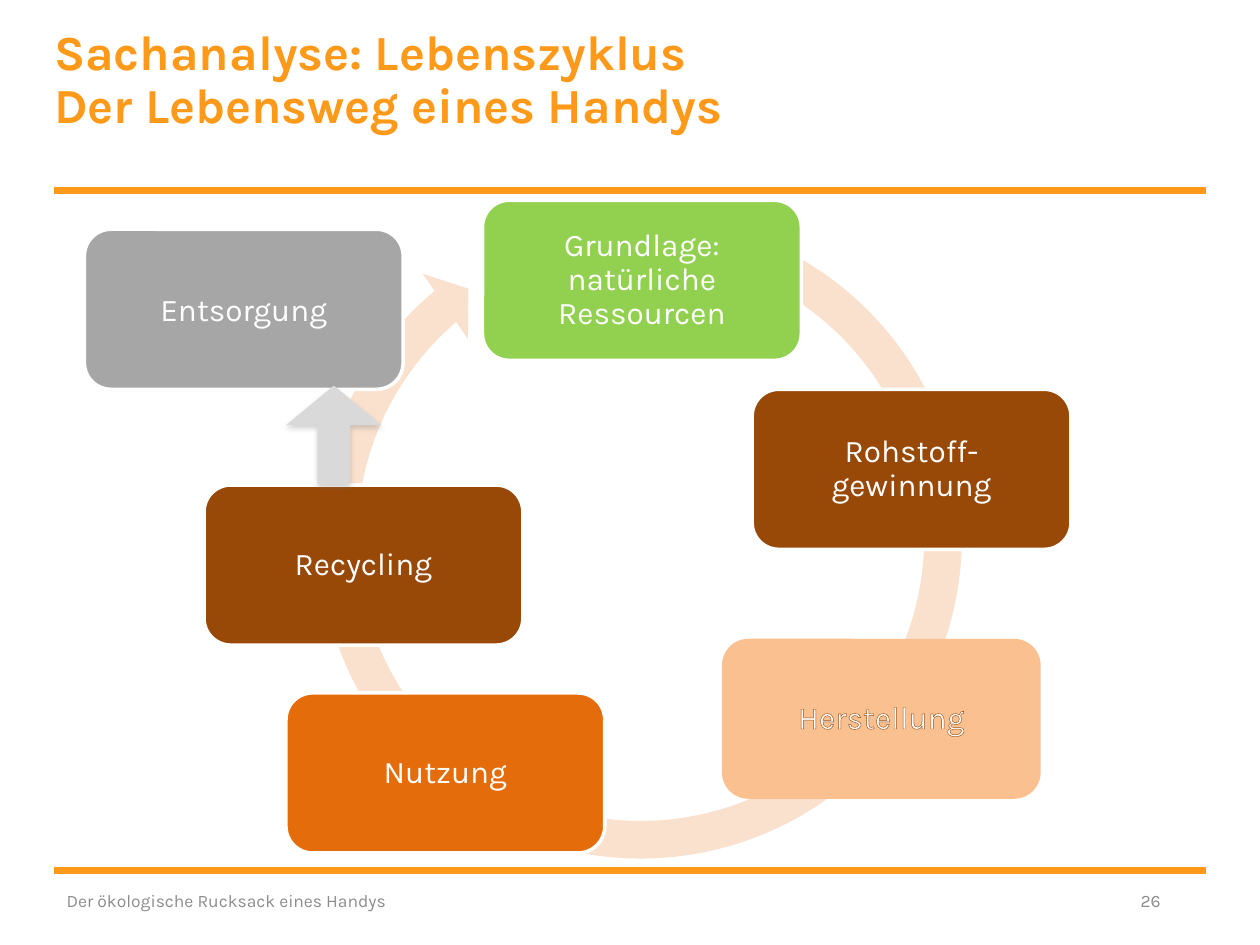
import pptx
import pptx.util
from lxml import etree
from pptx.dml.color import RGBColor
from pptx.enum.shapes import MSO_CONNECTOR, MSO_SHAPE
from pptx.enum.text import MSO_ANCHOR, MSO_AUTO_SIZE, PP_ALIGN
from pptx.oxml import parse_xml
from pptx.oxml.ns import nsdecls, qn

ORANGE = RGBColor(0xFF, 0x99, 0x19)
WHITE = RGBColor(0xFF, 0xFF, 0xFF)
PEACH = RGBColor(0xFA, 0xE1, 0xCE)
GREEN = RGBColor(0x92, 0xD0, 0x50)
BROWN = RGBColor(0x98, 0x48, 0x07)
APRICOT = RGBColor(0xFA, 0xC0, 0x90)
DARK_ORANGE = RGBColor(0xE4, 0x6C, 0x0A)
GREY = RGBColor(0xA6, 0xA6, 0xA6)
LIGHT_GREY = RGBColor(0xD9, 0xD9, 0xD9)
FOOTER_GREY = RGBColor(0x8C, 0x8C, 0x8C)

presentation = pptx.Presentation()
presentation.slide_width = pptx.util.Inches(10)
presentation.slide_height = pptx.util.Inches(7.5)
slide = presentation.slides.add_slide(presentation.slide_layouts[5])

# Grid of 100 columns and 75 rows
COLUMN = presentation.slide_width / 100
ROW = presentation.slide_height / 75


def place(left, top, width, height):
    return [round(value) for value in
            (left * COLUMN, top * ROW, width * COLUMN, height * ROW)]


def write(shape, text, size, color, align, anchor, spacing=1.0, bold=False):
    frame = shape.text_frame
    frame.word_wrap = True
    frame.auto_size = MSO_AUTO_SIZE.NONE
    frame.vertical_anchor = anchor
    frame.text = text
    paragraph = frame.paragraphs[0]
    paragraph.alignment = align
    paragraph.line_spacing = spacing
    for run in paragraph.runs:
        run.font.name = "Karla"
        run.font.size = pptx.util.Pt(size)
        run.font.bold = bold
        run.font.color.rgb = color


# Rules above and below the content
for rule_row in (15.1, 69.1):
    left, top, width, _ = place(4.3, rule_row, 91.4, 0)
    rule = slide.shapes.add_connector(
        MSO_CONNECTOR.STRAIGHT, left, top, left + width, top)
    rule.line.color.rgb = ORANGE
    rule.line.width = pptx.util.Pt(4)
    etree.SubElement(rule._element.spPr, qn("a:effectLst"))

# Title
title = slide.shapes.title
title.left, title.top, title.width, title.height = place(4.3, 2.2, 66.9, 11.7)
write(title, "Sachanalyse: Lebenszyklus\vDer Lebensweg eines Handys",
      28, ORANGE, PP_ALIGN.LEFT, MSO_ANCHOR.TOP, 0.9, True)
title_frame = title.text_frame
title_frame.margin_left = title_frame.margin_right = 0
title_frame.margin_top = title_frame.margin_bottom = 0

# Circular arrow behind the stages
cycle = slide.shapes.add_shape(
    MSO_SHAPE.CIRCULAR_ARROW, *place(23.7, 15.5, 54.3, 54.3))
for index, value in enumerate((0.055, 3.307, 137.866, 173.795, 0.058)):
    cycle.adjustments[index] = value
cycle.shadow.inherit = False
cycle.fill.solid()
cycle.fill.fore_color.rgb = PEACH
cycle.line.fill.background()

# Stages of the life cycle: text, left, top, fill, line spacing
stages = [
    ("Grundlage: natürliche Ressourcen", 38.3, 15.9, GREEN, 0.9),
    ("Rohstoff-gewinnung", 59.7, 30.9, BROWN, 0.9),
    ("Herstellung", 57.3, 50.7, APRICOT, 0.9),
    ("Nutzung", 22.7, 55, DARK_ORANGE, 0.9),
    ("Recycling", 16.2, 38.5, BROWN, 0.9),
    ("Entsorgung", 6.7, 18.2, GREY, 1.0),
]
for text, left, top, color, spacing in stages:
    stage = slide.shapes.add_shape(
        MSO_SHAPE.ROUNDED_RECTANGLE, *place(left, top, 25.3, 12.7))
    stage.shadow.inherit = False
    stage.fill.solid()
    stage.fill.fore_color.rgb = color
    write(stage, text, 18, WHITE, PP_ALIGN.CENTER, MSO_ANCHOR.MIDDLE, spacing)
    if text == "Herstellung":
        # No border, but a hairline around the letters
        stage.line.fill.background()
        run = stage.text_frame.paragraphs[0].runs[0]
        run.font._element.insert(0, parse_xml(
            f'<a:ln {nsdecls("a")} w="1270"><a:solidFill>'
            f'<a:srgbClr val="{BROWN}"/></a:solidFill></a:ln>'))
    else:
        stage.line.color.rgb = WHITE
        stage.line.width = pptx.util.Pt(2)

# Arrow from recycling to disposal, with a soft shadow
arrow = slide.shapes.add_shape(MSO_SHAPE.UP_ARROW, *place(22.7, 30.6, 7.6, 7.8))
arrow.adjustments[0] = 0.343
arrow.adjustments[1] = 0.414
arrow.fill.solid()
arrow.fill.fore_color.rgb = LIGHT_GREY
arrow.line.fill.background()
arrow._element.spPr.append(parse_xml(
    f'<a:effectLst {nsdecls("a")}><a:outerShdw blurRad="39400" dist="22900" '
    'dir="5400000" rotWithShape="0"><a:srgbClr val="808080">'
    '<a:alpha val="35000"/></a:srgbClr></a:outerShdw></a:effectLst>'))

# Footer and page number
for text, left, width, align in (
        ("Der ökologische Rucksack eines Handys", 4.3, 33.8, PP_ALIGN.LEFT),
        ("26", 75.2, 17.9, PP_ALIGN.RIGHT)):
    footer = slide.shapes.add_textbox(*place(left, 69.5, width, 4))
    write(footer, text, 10, FOOTER_GREY, align, MSO_ANCHOR.MIDDLE)

presentation.save("out.pptx")
